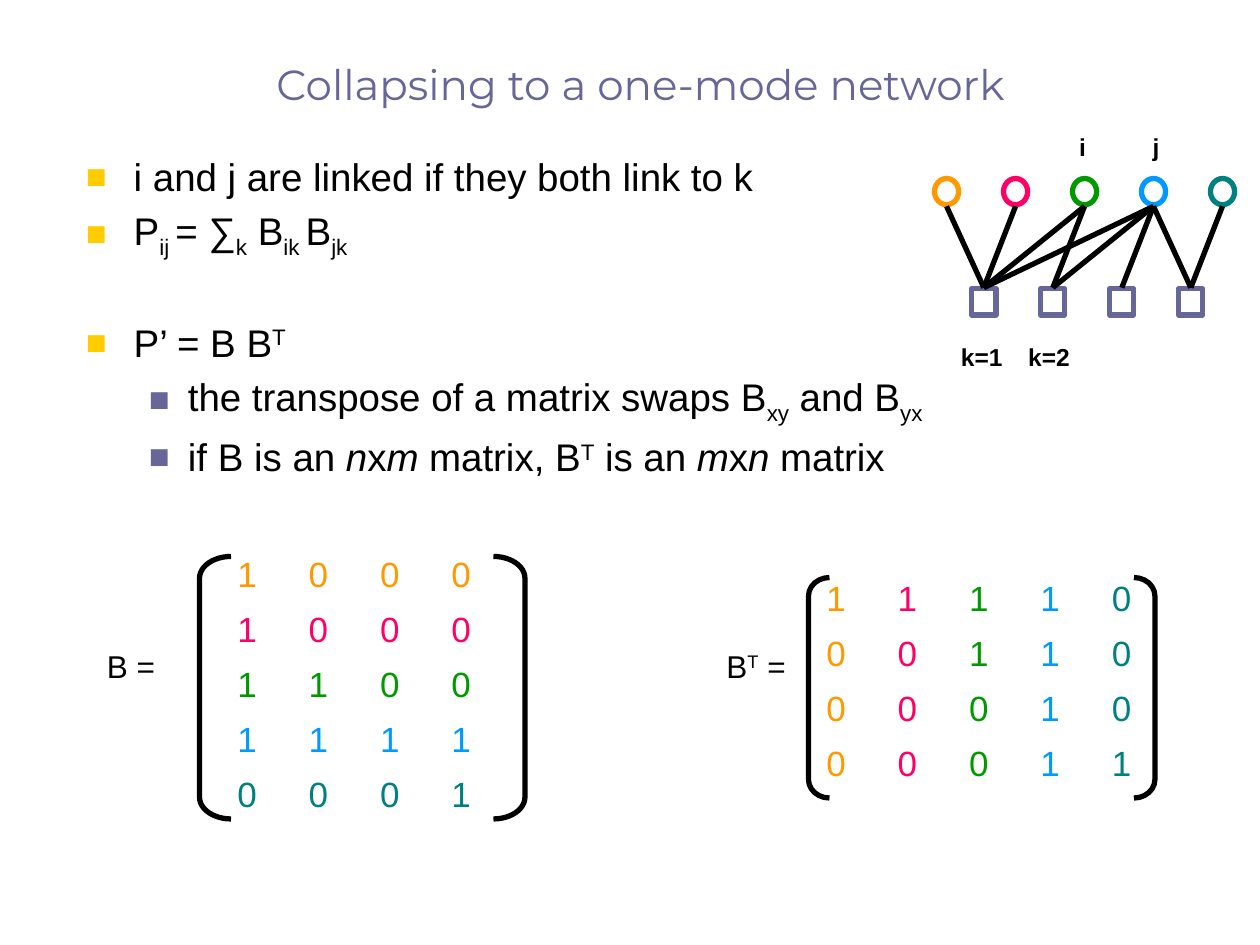
from lxml import etree
from pptx import Presentation
from pptx.dml.color import RGBColor
from pptx.enum.shapes import MSO_CONNECTOR as Connector, MSO_SHAPE as Shape
from pptx.enum.text import MSO_ANCHOR as Anchor, PP_ALIGN as Align
from pptx.oxml.ns import qn
from pptx.util import Inches, Pt

# Grid of 120 columns by 90 rows on a 10 x 7.5 inch slide
UNIT = Inches(10) / 120
BLACK, SLATE, GOLD = "000000", "666699", "FFCC00"
NODE_COLORS = ["FF9900", "FF0066", "009900", "0099FF", "008080"]
# Rows are the round nodes, columns the square nodes they link to
B = [[1, 0, 0, 0], [1, 0, 0, 0], [1, 1, 0, 0], [1, 1, 1, 1], [0, 0, 0, 1]]
SUB, SUPER, ITALIC = "sub", "super", "italic"


def grid(*values):
    return [round(value * UNIT) for value in values]


def color(hex_text):
    return RGBColor.from_string(hex_text)


def add_runs(paragraph, runs, size, hex_text=BLACK, font="Arial", bold=False):
    for text, style in runs:
        run = paragraph.add_run()
        run.text = text
        run.font.size, run.font.name = Pt(size), font
        run.font.color.rgb = color(hex_text)
        if bold:
            run.font.bold = True
        if style == ITALIC:
            run.font.italic = True
        elif style:
            run.font._element.set("baseline", "-25000" if style == SUB else "30000")


def add_text_frame(slide, box, wrap=True):
    frame = slide.shapes.add_textbox(*grid(*box)).text_frame
    frame.word_wrap = wrap
    return frame


def add_label(slide, box, runs, size, wrap=True, **font):
    paragraph = add_text_frame(slide, box, wrap).paragraphs[0]
    paragraph.alignment = Align.CENTER if wrap else Align.LEFT
    add_runs(paragraph, runs, size, **font)


def add_bullet(paragraph, level):
    left, indent, hex_text = [(0.38, -0.38, GOLD), (0.81, -0.31, SLATE)][level]
    properties = paragraph._p.get_or_add_pPr()
    properties.set("marL", str(Inches(left)))
    properties.set("indent", str(Inches(indent)))
    fill = etree.SubElement(properties, qn("a:buClr"))
    etree.SubElement(fill, qn("a:srgbClr"), val=hex_text)
    etree.SubElement(properties, qn("a:buSzPct"), val="90000")
    etree.SubElement(properties, qn("a:buFont"), typeface="Arial")
    etree.SubElement(properties, qn("a:buChar"), char="■")
    paragraph.level = level


def add_title(slide, box):
    frame = add_text_frame(slide, box)
    frame.vertical_anchor = Anchor.BOTTOM
    frame.paragraphs[0].alignment = Align.CENTER
    add_runs(frame.paragraphs[0], [("Collapsing to a one-mode network", None)],
             24, SLATE, "Montserrat")


def add_body(slide, box):
    # Level, space before in points, runs
    items = [
        (0, 0, [("i and j are linked if they both link to k", None)]),
        (0, 4.4, [("P", None), ("ij ", SUB), ("= ∑", None), ("k", SUB), (" B", None),
                  ("ik ", SUB), ("B", None), ("jk", SUB)]),
        (0, 34, [("P’ = B B", None), ("T", SUPER)]),
        (1, 4.4, [("the transpose of a matrix swaps B", None), ("xy", SUB),
                  (" and B", None), ("yx", SUB)]),
        (1, 4.4, [("if B is an ", None), ("n", ITALIC), ("x", None), ("m", ITALIC),
                  (" matrix, B", None), ("T", SUPER), (" is an ", None),
                  ("m", ITALIC), ("x", None), ("n", ITALIC), (" matrix", None)]),
    ]
    frame = add_text_frame(slide, box)
    for index, (level, space, runs) in enumerate(items):
        paragraph = frame.add_paragraph() if index else frame.paragraphs[0]
        add_bullet(paragraph, level)
        if space:
            paragraph.space_before = Pt(space)
        add_runs(paragraph, runs, 22)


def add_outline(shapes, kind, box, hex_text):
    shape = shapes.add_shape(kind, *grid(*box))
    shape.shadow.inherit = False
    shape.fill.background()
    shape.line.color.rgb = color(hex_text)
    shape.line.width = Pt(3)
    return shape


def add_network(slide, box):
    left, top, width, height = box
    node_width, node_height, pitch = 2.3, 2.5, 6.57
    shapes = slide.shapes.add_group_shape().shapes
    circles = [left + pitch * i for i in range(len(B))]
    squares = [left + 3.55 + pitch * k for k in range(len(B[0]))]
    square_top = top + height - node_height

    # Nodes
    for x, hex_text in zip(circles, NODE_COLORS):
        add_outline(shapes, Shape.OVAL, (x, top, node_width, node_height), hex_text)
    for x in squares:
        add_outline(shapes, Shape.RECTANGLE,
                    (x, square_top, node_width, node_height), SLATE)

    # One line for each 1 in the matrix
    for x, row in zip(circles, B):
        for square_x, linked in zip(squares, row):
            if linked:
                line = shapes.add_connector(Connector.STRAIGHT, *grid(
                    x + node_width / 2, top + node_height + 0.15,
                    square_x + node_width / 2, square_top - 0.1))
                line.line.color.rgb = color(BLACK)
                line.line.width = Pt(3)
                etree.SubElement(line._element.spPr, qn("a:effectLst"))

    # Node names
    for text, x, y, label_width in [("i", 12, -5, 4.2), ("j", 19, -5, 4.2),
                                    ("k=1", 0, 15, 9), ("k=2", 6.4, 15, 9)]:
        add_label(slide, (left + x, top + y, label_width, 4), [(text, None)], 14,
                  bold=True)


def add_brackets(slide, box, bracket_width, bend):
    left, top, width, height = box
    for x, flipped in [(left, False), (left + width - bracket_width, True)]:
        bracket = add_outline(slide.shapes, Shape.LEFT_BRACKET,
                              (x, top, bracket_width, height), BLACK)
        bracket.adjustments[0] = bend
        if flipped:
            bracket._element.spPr.xfrm.set("flipH", "1")


def add_matrix(slide, origin, values, cell_color):
    column_width, row_height = 6.8, 5.25
    rows, columns = len(values), len(values[0])
    frame = slide.shapes.add_table(rows, columns, *grid(
        *origin, columns * column_width, rows * row_height))
    table = frame.table
    table.first_row = table.horz_banding = False
    for r, row in enumerate(values):
        for c, value in enumerate(row):
            cell = table.cell(r, c)
            cell.fill.background()
            # Borderless cells
            properties = cell._tc.get_or_add_tcPr()
            for place, side in enumerate(["a:lnL", "a:lnR", "a:lnT", "a:lnB"]):
                border = etree.Element(qn(side), w="0")
                etree.SubElement(border, qn("a:noFill"))
                properties.insert(place, border)
            add_runs(cell.text_frame.paragraphs[0], [(str(value), None)], 20,
                     cell_color(r, c))


def main():
    presentation = Presentation()
    presentation.slide_width, presentation.slide_height = grid(120, 90)
    slide = presentation.slides.add_slide(presentation.slide_layouts[6])

    add_title(slide, (7, 4, 108, 7))
    add_body(slide, (7, 14, 108, 66))
    add_network(slide, (89, 17, 28.6, 13))

    # Matrix B
    add_brackets(slide, (19, 53, 31, 25), 3, 0.69)
    add_label(slide, (9, 61, 7, 4.8), [("B =", None)], 18, wrap=False)
    add_matrix(slide, (21.4, 52.3), B, lambda r, c: NODE_COLORS[r])

    # Its transpose
    add_label(slide, (68, 61, 8.3, 4.8),
              [("B", None), ("T", SUPER), (" =", None)], 18, wrap=False)
    add_brackets(slide, (77, 55, 33, 21), 2, 0.88)
    add_matrix(slide, (77.5, 54.6), list(zip(*B)), lambda r, c: NODE_COLORS[c])

    presentation.save("out.pptx")


if __name__ == "__main__":
    main()
